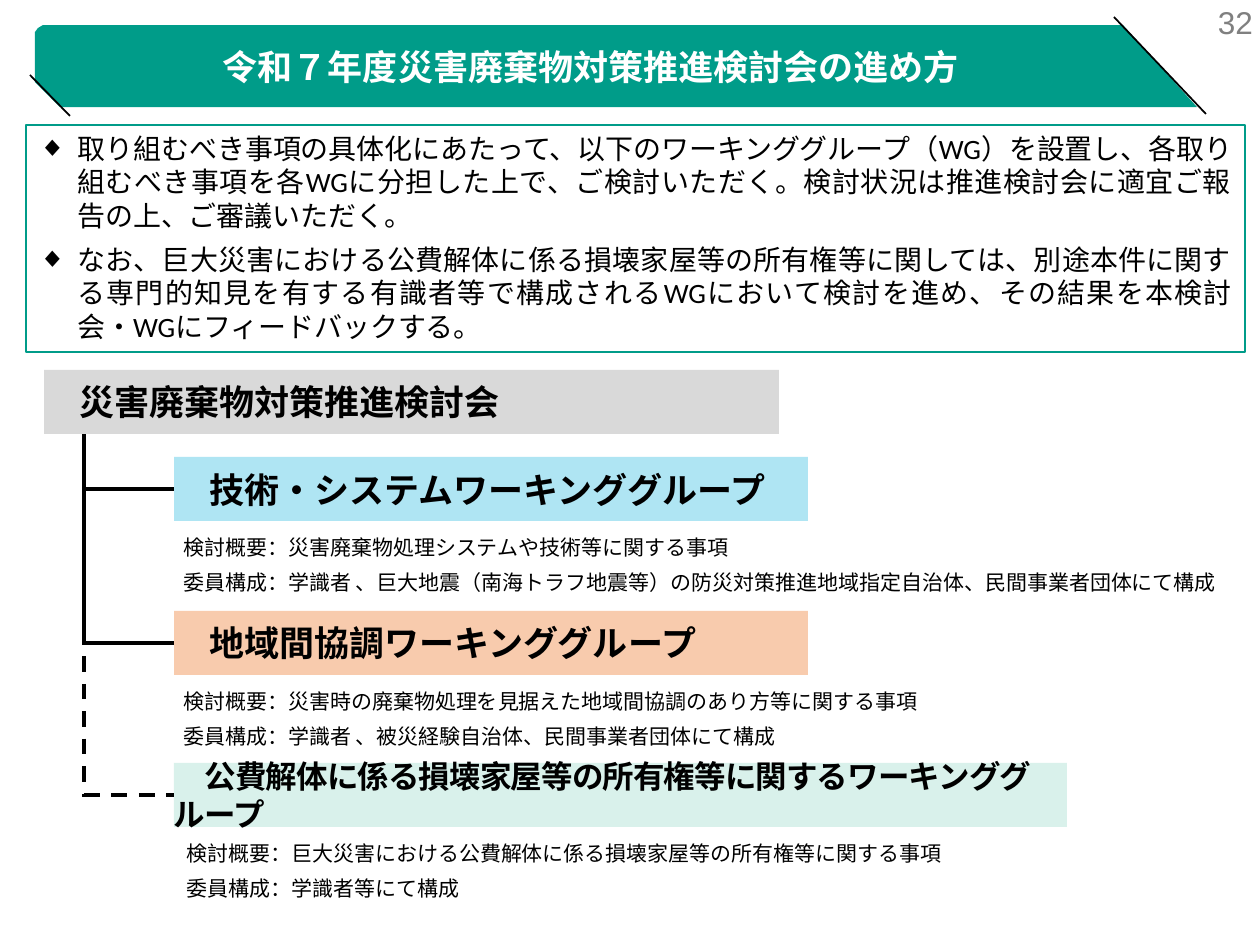
from lxml.etree import SubElement
from pptx import Presentation
from pptx.dml.color import RGBColor
from pptx.enum.dml import MSO_LINE
from pptx.enum.shapes import MSO_CONNECTOR, MSO_SHAPE
from pptx.enum.text import MSO_ANCHOR, PP_ALIGN
from pptx.oxml.ns import qn
from pptx.util import Pt

PX = 914400 / 126
TEAL = "009C89"
JP = "Noto Sans CJK JP"
HEAD = {"name": JP, "size": Pt(20), "bold": True}
INTRO = [
    "取り組むべき事項の具体化にあたって、以下のワーキンググループ（WG）を設置し、各取り組むべき事項を各WGに分担した上で、ご検討いただく。検討状況は推進検討会に適宜ご報告の上、ご審議いただく。",
    "なお、巨大災害における公費解体に係る損壊家屋等の所有権等に関しては、別途本件に関する専門的知見を有する有識者等で構成されるWGにおいて検討を進め、その結果を本検討会・WGにフィードバックする。",
]
# top, width, fill, name, font changes, spacing, dash, note left, notes
GROUPS = [
    (457, 634, "AFE5F3", "技術・システムワーキンググループ", {}, 0, None, 171,
     ["検討概要：災害廃棄物処理システムや技術等に関する事項",
      "委員構成：学識者 、巨大地震（南海トラフ地震等）の防災対策推進地域指定自治体、民間事業者団体にて構成"]),
    (611, 634, "F8CBAD", "地域間協調ワーキンググループ", {}, 0, None, 171,
     ["検討概要：災害時の廃棄物処理を見据えた地域間協調のあり方等に関する事項",
      "委員構成：学識者 、被災経験自治体、民間事業者団体にて構成"]),
    (763, 893, "D9F1EB", "公費解体に係る損壊家屋等の所有権等に関するワーキンググループ",
     {"size": Pt(18)}, -50, MSO_LINE.DASH, 174,
     ["検討概要：巨大災害における公費解体に係る損壊家屋等の所有権等に関する事項",
      "委員構成：学識者等にて構成"]),
]
TRUNK, BAR_X, BAR_H = 84, 174, 64


def px(*nums):
    return [round(n * PX) for n in nums]


def color(hex_str):
    return RGBColor.from_string(hex_str)


def apply(obj, form):
    for key, val in form.items():
        setattr(obj, key, val)


def paint(shape, fill=None, line=None):
    shape.shadow.inherit = False
    if fill:
        shape.fill.solid()
        shape.fill.fore_color.rgb = color(fill)
    else:
        shape.fill.background()
    if line:
        shape.line.color.rgb = color(line)
        shape.line.width = Pt(1.5)
    else:
        shape.line.fill.background()


def write(shape, lines, font, para=None, frame=None, ink="000000", spc=0):
    """Fill the shape with one paragraph per line and return the paragraphs."""
    text = shape.text_frame
    apply(text, {"word_wrap": True, **(frame or {})})
    text.text = "\n".join(lines)
    for item in text.paragraphs:
        apply(item, {"alignment": PP_ALIGN.LEFT, **(para or {})})
        run = item.runs[0]
        apply(run.font, font)
        run.font.color.rgb = color(ink)
        props = run._r.get_or_add_rPr()
        SubElement(props, qn("a:ea")).set("typeface", JP)
        if spc:
            props.set("spc", str(spc))
    return text.paragraphs


def margins(left=0, top=0):
    return {"margin_left": px(left)[0], "margin_top": px(top)[0],
            "margin_right": 0, "margin_bottom": 0}


def add_box(slide, area, fill=None, line=None):
    shape = slide.shapes.add_shape(MSO_SHAPE.RECTANGLE, *px(*area))
    paint(shape, fill, line)
    return shape


def add_bar(slide, area, fill, name, form=None, spc=0):
    bar = add_box(slide, area, fill)
    write(bar, ["\u3000".replace("\u3000", "　") + name], {**HEAD, **(form or {})},
          frame={"vertical_anchor": MSO_ANCHOR.MIDDLE, **margins()}, spc=spc)
    return bar


def add_text(slide, area, lines, font, **kw):
    return write(slide.shapes.add_textbox(*px(*area)), lines, font, **kw)


def add_line(slide, ends, width=2.25, dash=None):
    line = slide.shapes.add_connector(MSO_CONNECTOR.STRAIGHT, *px(*ends))
    line.line.color.rgb = color("000000")
    apply(line.line, {"width": Pt(width), "dash_style": dash})
    SubElement(line._element.spPr, qn("a:effectLst"))
    return line


def add_banner(slide):
    build = slide.shapes.build_freeform(60, 107, scale=PX)
    build.add_line_segments(
        [(1197, 107), (1123, 25), (43, 25), (38, 28), (35, 32), (35, 82)])
    paint(build.convert_to_shape(), TEAL)
    for ends in [(1114, 17, 1206, 114), (30, 75, 70, 116)]:
        add_line(slide, ends, 1)
    add_text(slide, (34, 27, 1079, 79), ["令和７年度災害廃棄物対策推進検討会の進め方"], HEAD,
             para={"alignment": PP_ALIGN.CENTER, "line_spacing": 0.9},
             frame={"vertical_anchor": MSO_ANCHOR.MIDDLE, **margins(35, 5)},
             ink="FFFFFF")
    add_text(slide, (1211, 0, 42, 41), ["32"], {"name": "Arial", "size": Pt(18)},
             para={"alignment": PP_ALIGN.RIGHT},
             frame={"vertical_anchor": MSO_ANCHOR.BOTTOM, "word_wrap": False,
                    **margins()}, ink="808080")


def add_intro(slide):
    box = add_box(slide, (26, 125, 1219, 227), line=TEAL)
    items = write(box, INTRO, {"name": "Calibri", "size": Pt(16)},
                  para={"alignment": PP_ALIGN.JUSTIFY, "space_after": Pt(6)},
                  frame={"vertical_anchor": MSO_ANCHOR.TOP})
    hang = px(39)[0]
    for item in items:
        props = item._p.get_or_add_pPr()
        props.set("marL", str(hang))
        props.set("indent", str(-hang))
        SubElement(props, qn("a:buFont")).set("typeface", "Arial")
        SubElement(props, qn("a:buChar")).set("char", "◆")


def add_group(slide, top, width, fill, name, form, spc, dash, left, notes):
    bar = add_bar(slide, (BAR_X, top, width, BAR_H), fill, name, form, spc)
    mid = top + BAR_H // 2
    add_line(slide, (TRUNK, mid, BAR_X, mid), dash=dash).end_connect(bar, 1)
    add_text(slide, (left, top + 71, 1074, 74), notes,
             {"name": "Calibri", "size": Pt(12)}, para={"space_after": Pt(6)})


def main():
    deck = Presentation()
    deck.slide_width, deck.slide_height = px(1260, 945)
    slide = deck.slides.add_slide(deck.slide_layouts[6])
    add_banner(slide)
    add_intro(slide)
    add_line(slide, (TRUNK, 434, TRUNK, 643))
    add_line(slide, (TRUNK, 629, TRUNK, 797), dash=MSO_LINE.DASH)
    for group in GROUPS:
        add_group(slide, *group)
    add_bar(slide, (44, 370, 735, BAR_H), "D9D9D9", "災害廃棄物対策推進検討会")
    deck.save("out.pptx")


if __name__ == "__main__":
    main()
